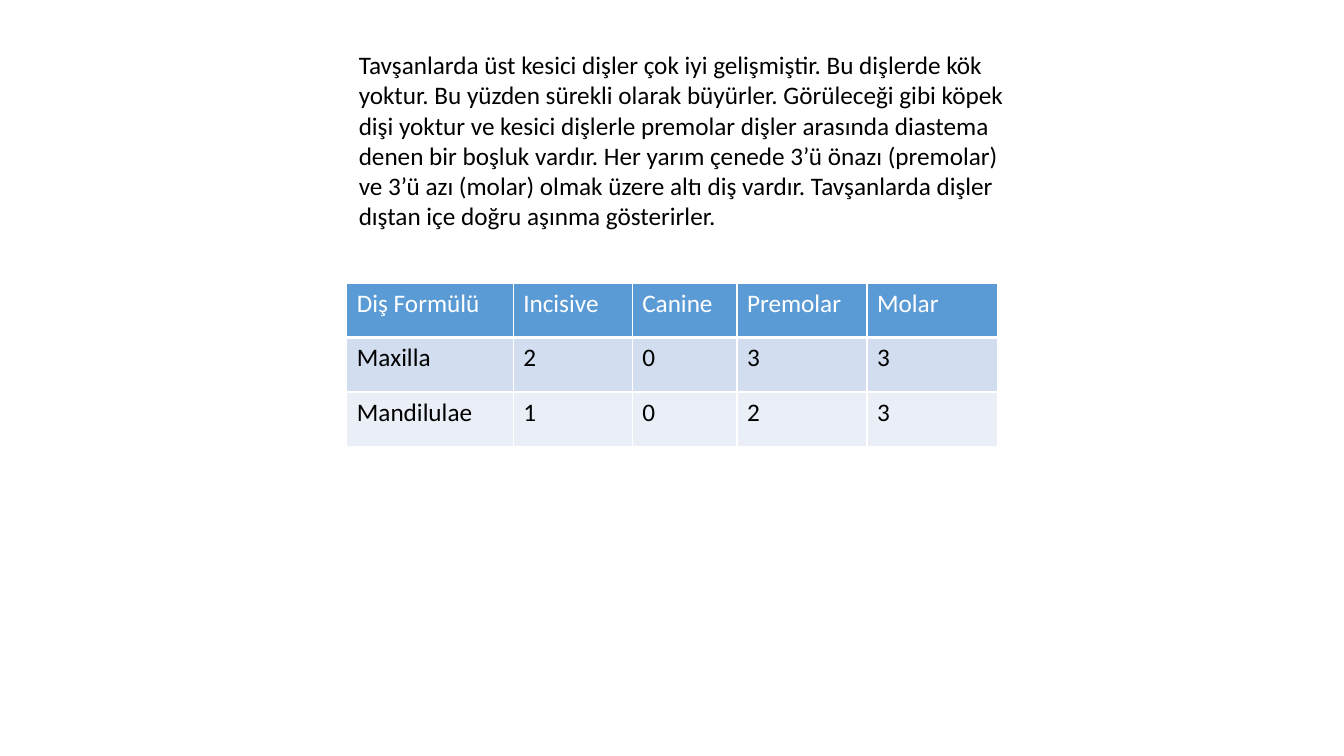
from lxml.etree import SubElement
from pptx import Presentation
from pptx.dml.color import RGBColor
from pptx.enum.text import MSO_AUTO_SIZE
from pptx.oxml.ns import qn
from pptx.util import Inches, Pt

BLACK = RGBColor(0x00, 0x00, 0x00)
WHITE = RGBColor(0xFF, 0xFF, 0xFF)
HEADER_BLUE = RGBColor(0x5B, 0x9B, 0xD5)
BAND_BLUE = RGBColor(0xD2, 0xDE, 0xEF)
BAND_PALE = RGBColor(0xEA, 0xEF, 0xF7)

INTRO = (
    "Tavşanlarda üst kesici dişler çok iyi gelişmiştir. Bu dişlerde kök yoktur. "
    "Bu yüzden sürekli olarak büyürler. Görüleceği gibi köpek dişi yoktur ve "
    "kesici dişlerle premolar dişler arasında diastema denen bir boşluk vardır. "
    "Her yarım çenede 3’ü önazı (premolar) ve 3’ü azı (molar) olmak üzere altı "
    "diş vardır. Tavşanlarda dişler dıştan içe doğru aşınma gösterirler."
)
DENTAL_FORMULA = [
    ["Diş Formülü", "Incisive", "Canine", "Premolar", "Molar"],
    ["Maxilla", "2", "0", "3", "3"],
    ["Mandilulae", "1", "0", "2", "3"],
]
COLUMN_WIDTHS = [1.65, 1.18, 1.04, 1.29, 1.29]
ROW_HEIGHT = 0.54
ROW_STYLES = [(HEADER_BLUE, WHITE), (BAND_BLUE, BLACK), (BAND_PALE, BLACK)]


def style_paragraph(paragraph, color):
    paragraph.font.name = "Calibri"
    paragraph.font.size = Pt(18)
    paragraph.font.bold = False
    paragraph.font.color.rgb = color


def add_border(cell, side, width):
    line = SubElement(cell._tc.get_or_add_tcPr(), qn(f"a:{side}"), w=str(Pt(width)))
    fill = SubElement(line, qn("a:solidFill"))
    SubElement(fill, qn("a:srgbClr"), val=str(WHITE))


deck = Presentation()
deck.slide_width = Inches(13.33)
deck.slide_height = Inches(7.5)
page = deck.slides.add_slide(deck.slide_layouts[6])

intro_box = page.shapes.add_textbox(Inches(3.46), Inches(0.44), Inches(6.69), Inches(1.92))
intro_box.text_frame.word_wrap = True
intro_box.text_frame.auto_size = MSO_AUTO_SIZE.SHAPE_TO_FIT_TEXT
intro = intro_box.text_frame.paragraphs[0]
intro.text = INTRO
style_paragraph(intro, BLACK)

table = page.shapes.add_table(
    len(DENTAL_FORMULA), len(COLUMN_WIDTHS), Inches(3.44), Inches(2.81),
    Inches(sum(COLUMN_WIDTHS)), Inches(ROW_HEIGHT * len(DENTAL_FORMULA)),
).table
for column, width in zip(table.columns, COLUMN_WIDTHS):
    column.width = Inches(width)

for row_index, (labels, (fill_color, text_color)) in enumerate(zip(DENTAL_FORMULA, ROW_STYLES)):
    table.rows[row_index].height = Inches(ROW_HEIGHT)
    for column_index, label in enumerate(labels):
        cell = table.cell(row_index, column_index)
        cell.text = label
        style_paragraph(cell.text_frame.paragraphs[0], text_color)
        for side in ("lnL", "lnR", "lnT", "lnB"):
            add_border(cell, side, 3 if row_index == 0 and side == "lnB" else 1)
        cell.fill.solid()
        cell.fill.fore_color.rgb = fill_color

deck.save("out.pptx")
